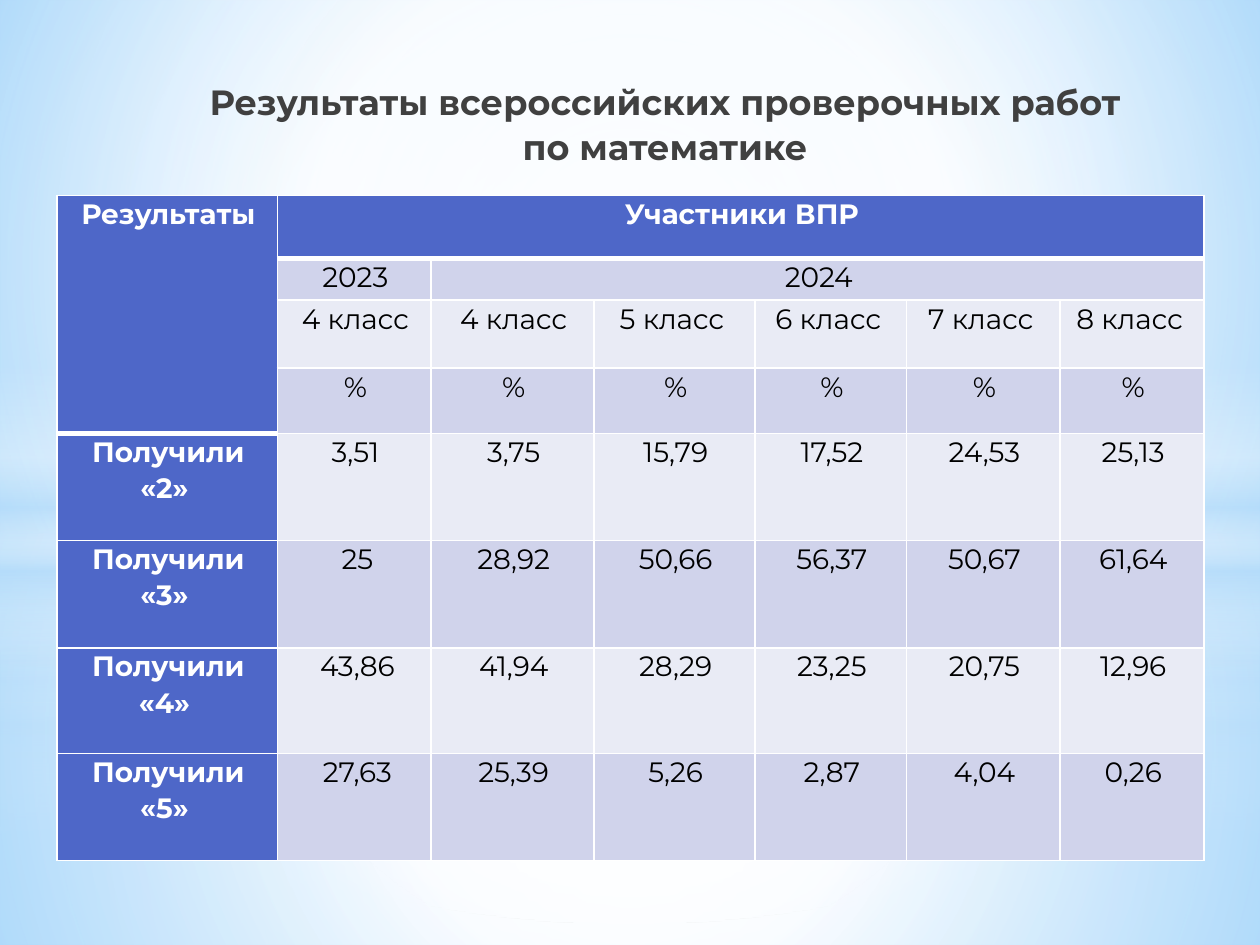
from dataclasses import dataclass

from lxml import etree
from pptx import Presentation
from pptx.dml.color import RGBColor
from pptx.enum import shapes, text
from pptx.oxml import ns
from pptx.util import Cm, Pt

FONT = "Montserrat"
WHITE = RGBColor(0xFF, 0xFF, 0xFF)
BLACK = RGBColor(0x00, 0x00, 0x00)
TITLE_GREY = RGBColor(0x40, 0x40, 0x40)
HEADER_BLUE = RGBColor(0x4E, 0x67, 0xC8)
BAND_DARK = RGBColor(0xD0, 0xD3, 0xEB)
BAND_LIGHT = RGBColor(0xE9, 0xEB, 0xF5)
SKY = RGBColor(0xB4, 0xDC, 0xFA)
SKY_CENTRE = RGBColor(0x9E, 0xD5, 0xFF)
SKY_EDGE = RGBColor(0x5B, 0xB9, 0xFF)

WIDTH, HEIGHT = 25.4, 19.05
COLUMN_WIDTHS = (4.44, 3.1, 3.28, 3.25, 3.05, 3.1, 2.9)
ROW_HEIGHTS = (1.27, 0.84, 1.37, 1.32, 2.16, 2.16, 2.13, 2.16)
MERGES = (((0, 0), (3, 0)), ((0, 1), (0, 6)), ((1, 2), (1, 6)))
INDENTED = ("25", "43,86", "27,63")
ROWS = (
    ("Результаты", "Участники ВПР"),
    ("", "2023", "2024"),
    ("", "4 класс", "4 класс", "5 класс ", "6 класс ", "7 класс ", "8 класс "),
    ("",) + ("%",) * 6,
    ("Получили «2» ", "3,51", "3,75", "15,79", "17,52", "24,53", "25,13"),
    ("Получили «3» ", "25", "28,92", "50,66", "56,37", "50,67", "61,64"),
    ("Получили «4» ", "43,86", "41,94", "28,29", "23,25", "20,75", "12,96"),
    ("Получили «5» ", "27,63", "25,39", "5,26", "2,87", "4,04", "0,26"),
)


@dataclass(frozen=True)
class Stop:
    position: int
    colour: RGBColor
    opacity: int = 100


@dataclass(frozen=True)
class Glow:
    """Full-width background shape; a linear glow has no focus rectangle."""
    top: float
    height: float
    stops: tuple[Stop, ...]
    focus: tuple[int, ...] | None = (50, 50, 50, 50)
    preset: shapes.MSO_SHAPE = shapes.MSO_SHAPE.RECTANGLE


def sky_layer(split: float, band_top: float, opacity: int, halo_end: int) -> tuple[Glow, ...]:
    lower = (Stop(0, WHITE, opacity + 1), Stop(37, WHITE, opacity - 14),
             Stop(100, SKY, opacity - 11))
    upper = (Stop(0, WHITE, opacity - 1), Stop(48, WHITE, opacity - 28),
             Stop(100, SKY, opacity - 11))
    band = (Stop(0, WHITE, 0), Stop(29, WHITE, 30), Stop(45, SKY, 40),
            Stop(55, WHITE, 26), Stop(65, SKY, 60), Stop(100, WHITE, 0))
    halo = (Stop(0, WHITE), Stop(halo_end, WHITE, 0))
    return (
        Glow(split, HEIGHT - split, lower),
        Glow(0, split, upper),
        Glow(band_top, 6.35, band, focus=None),
        Glow(4.45, 14.17, halo, preset=shapes.MSO_SHAPE.OVAL),
    )


def add_element(parent, tag: str, **attributes):
    values = {name: str(value) for name, value in attributes.items()}
    return etree.SubElement(parent, ns.qn(tag), values)


def replace_with_gradient(properties, stops: tuple[Stop, ...], focus) -> None:
    """Swap the solid fill in the given properties for a gradient."""
    solid = properties.find(ns.qn("a:solidFill"))
    gradient = etree.Element(ns.qn("a:gradFill"), rotWithShape="1")
    stop_list = add_element(gradient, "a:gsLst")
    for stop in stops:
        mark = add_element(stop_list, "a:gs", pos=stop.position * 1000)
        colour = add_element(mark, "a:srgbClr", val=stop.colour)
        if stop.opacity < 100:
            add_element(colour, "a:alpha", val=stop.opacity * 1000)
    if focus is None:
        add_element(gradient, "a:lin", ang=90 * 60000, scaled=0)
    else:
        circle = add_element(gradient, "a:path", path="circle")
        sides = {side: inset * 1000 for side, inset in zip("ltrb", focus)}
        add_element(circle, "a:fillToRect", **sides)
    properties.replace(solid, gradient)


def add_glow(slide, glow: Glow) -> None:
    shape = slide.shapes.add_shape(glow.preset, 0, Cm(glow.top), Cm(WIDTH), Cm(glow.height))
    shape.shadow.inherit = False
    shape.line.fill.background()
    shape.fill.solid()
    replace_with_gradient(shape.element.spPr, glow.stops, glow.focus)


def add_text(paragraph, wording: str, size: int, colour: RGBColor, bold: bool,
             spacing: float) -> None:
    paragraph.alignment = text.PP_ALIGN.CENTER
    paragraph.line_spacing = spacing
    paragraph.space_before = Pt(0)
    paragraph.space_after = Pt(8)
    run = paragraph.add_run()
    run.text = wording
    run.font.name = FONT
    run.font.size = Pt(size)
    run.font.bold = bold
    run.font.color.rgb = colour


def set_borders(cell, top: int, bottom: int) -> None:
    properties = cell._tc.get_or_add_tcPr()
    for side, width in (("L", 1), ("R", 1), ("T", top), ("B", bottom)):
        line = add_element(properties, f"a:ln{side}", w=Pt(width))
        fill = add_element(line, "a:solidFill")
        add_element(fill, "a:srgbClr", val=WHITE)


def add_title(slide) -> None:
    title = slide.shapes.title
    title.left, title.top, title.width, title.height = Cm(3.71), Cm(0.91), Cm(19.4), Cm(2.6)
    frame = title.text_frame
    frame.word_wrap = True
    frame.auto_size = text.MSO_AUTO_SIZE.NONE
    frame.vertical_anchor = text.MSO_ANCHOR.BOTTOM
    add_text(frame.paragraphs[0], "Результаты всероссийских проверочных работ по математике",
             20, TITLE_GREY, True, 1.07)
    # The glows were added later, so bring the title in front of them.
    slide.shapes.element.append(title.element)


def format_cell(cell, row: int, column: int, wording: str) -> None:
    header = row == 0 or column == 0
    thick_top = row == 1 or (row, column) == (4, 0)
    thick_bottom = row == 0 or (row, column) == (3, 0)
    set_borders(cell, 3 if thick_top else 1, 3 if thick_bottom else 1)
    cell.fill.solid()
    cell.fill.fore_color.rgb = HEADER_BLUE if header else BAND_DARK if row % 2 else BAND_LIGHT
    cell.margin_left, cell.margin_right = Cm(0.18), Cm(0.13)
    cell.margin_top = cell.margin_bottom = 0
    if wording:
        paragraph = cell.text_frame.paragraphs[0]
        add_text(paragraph, wording, 16, WHITE if header else BLACK, header, 1.06)
        if wording in INDENTED:
            paragraph._p.get_or_add_pPr().set("marL", str(Cm(0.08)))


def add_results_table(slide) -> None:
    frame = slide.shapes.add_table(len(ROW_HEIGHTS), len(COLUMN_WIDTHS), Cm(1.15), Cm(3.94),
                                   Cm(sum(COLUMN_WIDTHS)), Cm(sum(ROW_HEIGHTS)))
    table = frame.table
    for column, width in zip(table.columns, COLUMN_WIDTHS):
        column.width = Cm(width)
    for row, height in zip(table.rows, ROW_HEIGHTS):
        row.height = Cm(height)
    for first, last in MERGES:
        table.cell(*first).merge(table.cell(*last))
    for row, wordings in enumerate(ROWS):
        for column in range(len(COLUMN_WIDTHS)):
            wording = wordings[column] if column < len(wordings) else ""
            format_cell(table.cell(row, column), row, column, wording)


def main() -> None:
    presentation = Presentation()
    presentation.slide_width, presentation.slide_height = Cm(WIDTH), Cm(HEIGHT)
    slide = presentation.slides.add_slide(presentation.slide_layouts[5])
    slide.background.fill.solid()
    replace_with_gradient(
        slide.element.find(".//" + ns.qn("p:bgPr")),
        (Stop(0, SKY_CENTRE), Stop(60, WHITE), Stop(100, SKY_EDGE)),
        (20, 10, 20, 60),
    )
    for glow in sky_layer(14.17, 10.46, 90, 56) + sky_layer(10.74, 7.37, 91, 54):
        add_glow(slide, glow)
    add_title(slide)
    add_results_table(slide)
    presentation.save("out.pptx")


if __name__ == "__main__":
    main()
